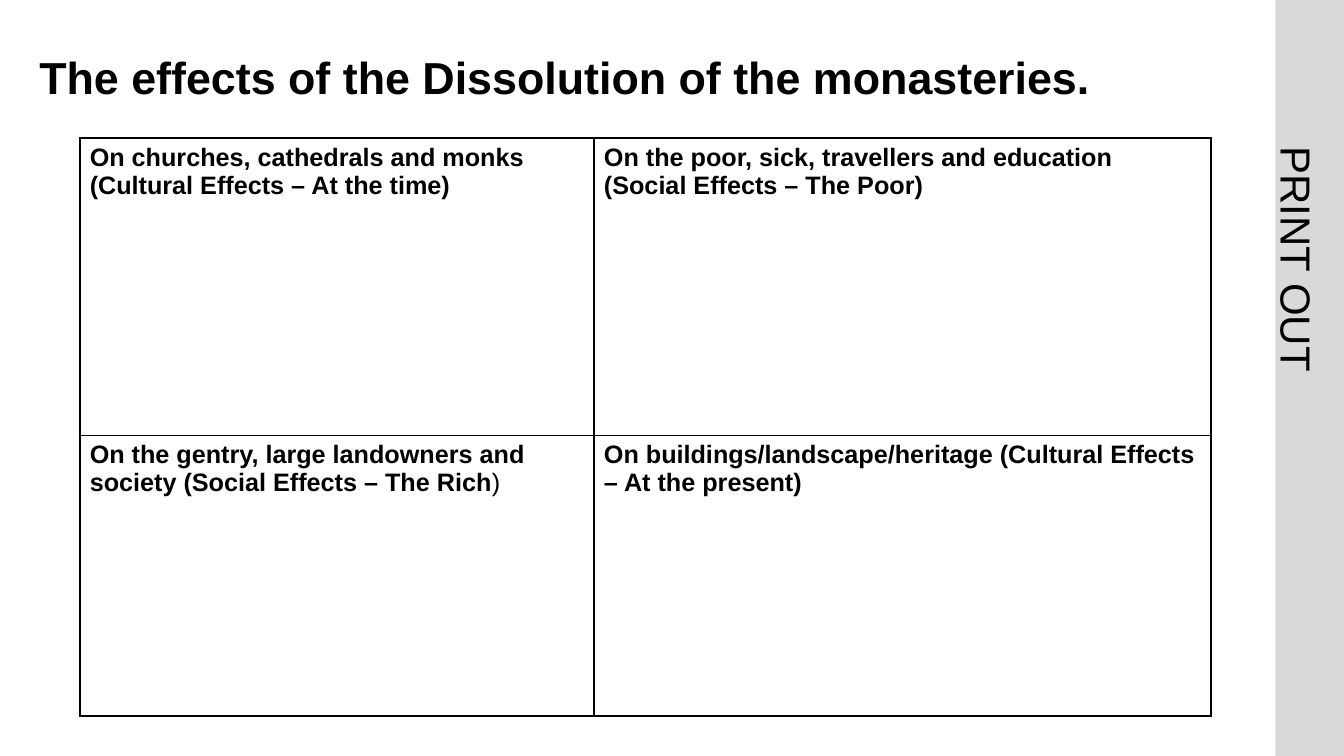
from dataclasses import dataclass

from lxml import etree
from pptx import Presentation
from pptx import util as u
from pptx.dml import color
from pptx.enum import shapes, text
from pptx.oxml import ns
from pptx.slide import Slide

COLORS = {"ink": "000000", "band": "D9D9D9"}
FONT = "Arial"
COLUMN_WIDTHS = (5.1, 6.12)
ROW_HEIGHTS = (2.95, 2.78)
BORDER_WIDTH = u.Pt(1.5)


@dataclass(frozen=True)
class Label:
    content: str
    box: tuple[float, float, float, float]
    size: float
    line_spacing: float | u.Length
    margins: tuple[float, float, float, float]
    bold: bool = False
    rotation: float = 0
    alignment: text.PP_ALIGN = text.PP_ALIGN.LEFT
    anchor: text.MSO_ANCHOR = text.MSO_ANCHOR.TOP


@dataclass(frozen=True)
class Effect:
    heading: str
    plain_ending: str = ""


LABELS = (
    Label("PRINT OUT", (11.07, 2.21, 4.01, 0.72), 30, u.Pt(58.8), (0, 0, 0, 0),
          rotation=90, alignment=text.PP_ALIGN.CENTER),
    Label("The effects of the Dissolution of the monasteries.",
          (0.39, 0.4, 12.03, 0.78), 32, 0.9, (0, 0.05, 0.1, 0.05),
          bold=True, anchor=text.MSO_ANCHOR.MIDDLE),
)

EFFECTS = (
    (Effect("On churches, cathedrals and monks (Cultural Effects – At the time)"),
     Effect("On the poor, sick, travellers and education (Social Effects – The Poor)")),
    (Effect("On the gentry, large landowners and society (Social Effects – The Rich", ")"),
     Effect("On buildings/landscape/heritage (Cultural Effects – At the present)")),
)


def style_font(font, size: float, bold: bool | None) -> None:
    font.name = FONT
    font.size = u.Pt(size)
    font.bold = bold
    font.color.rgb = color.RGBColor.from_string(COLORS["ink"])


def draw_band(slide: Slide) -> None:
    band = slide.shapes.add_shape(
        shapes.MSO_SHAPE.RECTANGLE, u.Inches(12.65), 0, u.Inches(0.68), u.Inches(7.5))
    band.shadow.inherit = False
    band.fill.solid()
    band.fill.fore_color.rgb = color.RGBColor.from_string(COLORS["band"])
    band.line.fill.background()


def draw_label(slide: Slide, label: Label) -> None:
    shape = slide.shapes.add_textbox(*map(u.Inches, label.box))
    shape.rotation = label.rotation
    frame = shape.text_frame
    frame.word_wrap = True
    frame.vertical_anchor = label.anchor
    (frame.margin_left, frame.margin_top,
     frame.margin_right, frame.margin_bottom) = map(u.Inches, label.margins)
    paragraph = frame.paragraphs[0]
    paragraph.text = label.content
    paragraph.alignment = label.alignment
    paragraph.line_spacing = label.line_spacing
    style_font(paragraph.font, label.size, label.bold)


def draw_borders(cell) -> None:
    properties = cell._tc.get_or_add_tcPr()
    for index, side in enumerate(("lnL", "lnR", "lnT", "lnB")):
        line = etree.Element(ns.qn(f"a:{side}"), w=str(BORDER_WIDTH))
        fill = etree.SubElement(line, ns.qn("a:solidFill"))
        etree.SubElement(fill, ns.qn("a:srgbClr"), val=COLORS["ink"])
        properties.insert(index, line)


def fill_cell(cell, effect: Effect) -> None:
    cell.fill.background()
    draw_borders(cell)
    paragraph = cell.text_frame.paragraphs[0]
    style_font(paragraph.font, 18, True)
    for content, bold in ((effect.heading, True), (effect.plain_ending, False)):
        if content:
            run = paragraph.add_run()
            run.text = content
            style_font(run.font, 18, bold)


def draw_effects(slide: Slide) -> None:
    table = slide.shapes.add_table(
        len(ROW_HEIGHTS), len(COLUMN_WIDTHS), u.Inches(0.79), u.Inches(1.37),
        u.Inches(sum(COLUMN_WIDTHS)), u.Inches(sum(ROW_HEIGHTS))).table
    table.first_row = False
    table.horz_banding = False
    for column, width in zip(table.columns, COLUMN_WIDTHS):
        column.width = u.Inches(width)
    for row, height, effects in zip(table.rows, ROW_HEIGHTS, EFFECTS):
        row.height = u.Inches(height)
        for cell, effect in zip(row.cells, effects):
            fill_cell(cell, effect)


def main() -> None:
    presentation = Presentation()
    presentation.slide_width = u.Inches(13.33)
    presentation.slide_height = u.Inches(7.5)
    slide = presentation.slides.add_slide(presentation.slide_layouts[6])
    draw_band(slide)
    for label in LABELS:
        draw_label(slide, label)
    draw_effects(slide)
    presentation.save("out.pptx")


if __name__ == "__main__":
    main()
